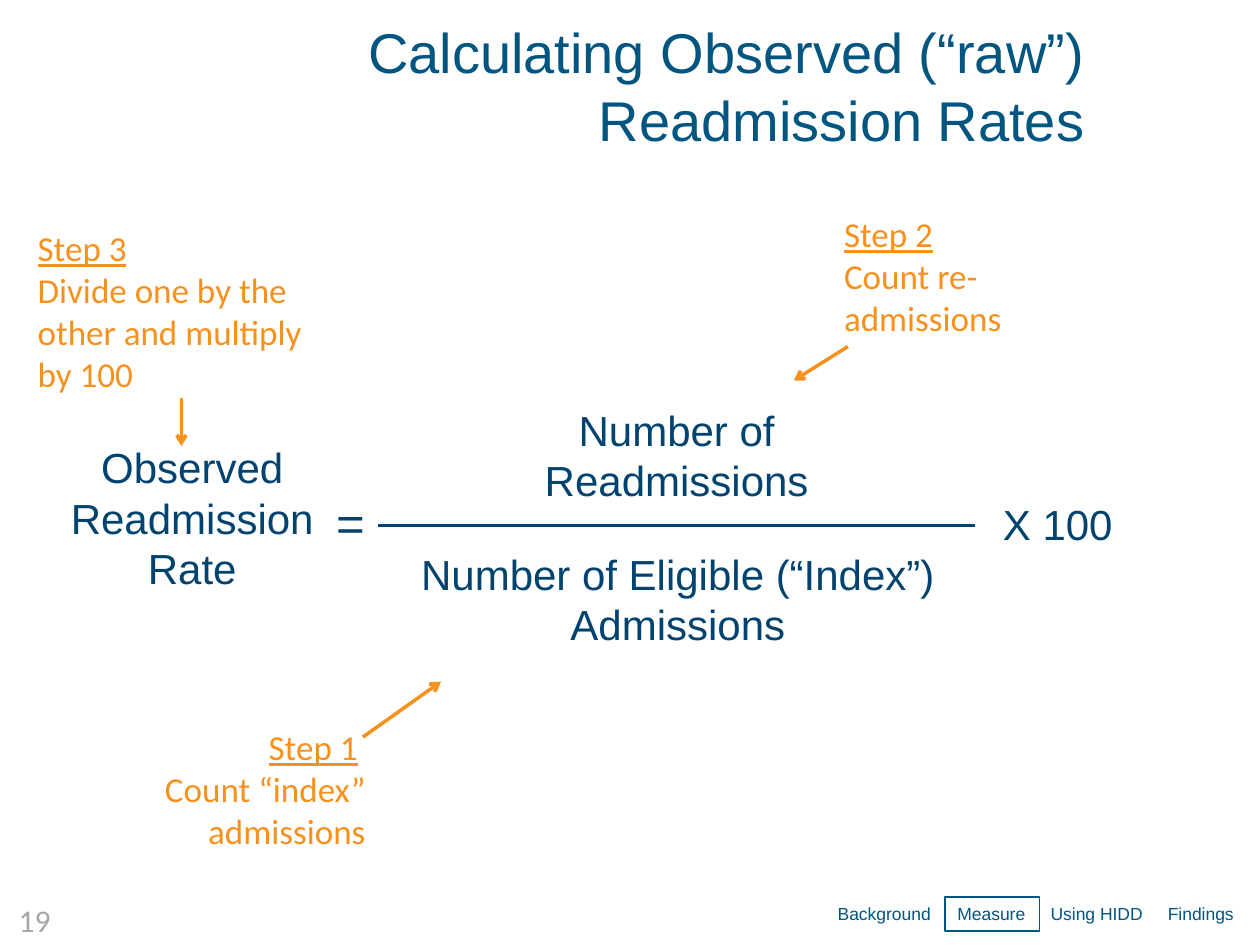
from dataclasses import dataclass

from lxml import etree
from pptx import Presentation
from pptx import util as u
from pptx.dml.color import RGBColor
from pptx.enum import shapes, text
from pptx.oxml import ns

TEAL = RGBColor(0x00, 0x55, 0x81)
NAVY = RGBColor(0x00, 0x43, 0x6E)
ORANGE = RGBColor(0xF6, 0x91, 0x1E)
GREY = RGBColor(0xA6, 0xA6, 0xA6)

LEFT, CENTER, RIGHT = text.PP_ALIGN.LEFT, text.PP_ALIGN.CENTER, text.PP_ALIGN.RIGHT
TOP, MIDDLE = text.MSO_ANCHOR.TOP, text.MSO_ANCHOR.MIDDLE


@dataclass
class Area:
    left: float
    top: float
    width: float
    height: float

    def lengths(self) -> list:
        return [u.Inches(v) for v in (self.left, self.top, self.width, self.height)]


@dataclass
class Term:
    """One part of the formula."""
    lines: list
    area: Area
    size: int = 24
    align: text.PP_ALIGN = CENTER
    anchor: text.MSO_ANCHOR = TOP
    wrap: bool = True


@dataclass
class Step:
    """A numbered note with an arrow to the part it explains."""
    heading: str
    lines: list
    area: Area
    start: tuple
    end: tuple
    align: text.PP_ALIGN = LEFT
    wrap: bool = True


@dataclass
class Section:
    label: str
    left: float
    width: float
    current: bool = False


TERMS = [
    Term(["Number of", "Readmissions"], Area(2.87, 3.16, 5, 0.91)),
    Term(["Number of Eligible (“Index”)", "Admissions"], Area(2.88, 4.3, 5, 0.91)),
    Term(["Observed Readmission", "Rate"], Area(0.25, 3.45, 2.55, 1.31), anchor=MIDDLE),
    Term(["="], Area(2.57, 3.86, 0.43, 0.57), size=28, align=LEFT, anchor=MIDDLE, wrap=False),
    Term(["X 100"], Area(7.12, 3.91, 2.55, 0.5), anchor=MIDDLE),
]
STEPS = [
    Step("Step 1 ", ["Count “index”", "admissions"], Area(1.19, 5.71, 1.81, 1.11),
         (2.88, 5.85), (3.5, 5.41), align=RIGHT, wrap=False),
    Step("Step 2", ["Count re-admissions"], Area(6.6, 1.64, 2.12, 1.11),
         (6.73, 2.75), (6.3, 3.02)),
    Step("Step 3", ["Divide one by the other and multiply by 100"],
         Area(0.2, 1.75, 2.48, 1.45), (1.44, 3.16), (1.44, 3.54)),
]
SECTIONS = [
    Section("Background", 6.55, 0.95),
    Section("Measure", 7.5, 0.75, current=True),
    Section("Using HIDD", 8.24, 0.94),
    Section("Findings", 9.17, 0.73),
]


def write(box, lines: list, *, size: int, color: RGBColor, font: str = "Arial",
          align=LEFT, anchor=TOP, wrap: bool = True, heading: str = "") -> None:
    """Fill a box with one paragraph per line, under an underlined heading if given."""
    frame = box.text_frame
    frame.word_wrap = wrap
    frame.auto_size = text.MSO_AUTO_SIZE.NONE
    frame.vertical_anchor = anchor
    for index, line in enumerate([heading, *lines] if heading else lines):
        para = frame.paragraphs[0] if index == 0 else frame.add_paragraph()
        para.alignment = align
        # A trailing space of a heading stays free of the underline
        label = line.rstrip()
        for part in filter(None, (label, line[len(label):])):
            span = para.add_run()
            span.text = part
            span.font.name = font
            span.font.size = u.Pt(size)
            span.font.color.rgb = color
            if heading and index == 0 and part == label:
                span.font.underline = True


def add_line(page, start: tuple, end: tuple, color: RGBColor, arrow: bool = False) -> None:
    line = page.shapes.add_connector(
        shapes.MSO_CONNECTOR.STRAIGHT, *(u.Inches(v) for v in (*start, *end)))
    line.line.color.rgb = color
    line.line.width = u.Pt(2)
    if arrow:
        etree.SubElement(line.line._get_or_add_ln(), ns.qn("a:tailEnd"), type="arrow")
    etree.SubElement(line._element.spPr, ns.qn("a:effectLst"))


def add_section(page, section: Section) -> None:
    area = Area(section.left, 7.12, section.width, 0.27).lengths()
    if section.current:
        box = page.shapes.add_shape(shapes.MSO_SHAPE.RECTANGLE, *area)
        box.shadow.inherit = False
        box.fill.background()
        box.line.color.rgb = TEAL
        box.line.width = u.Pt(0.75)
    else:
        box = page.shapes.add_textbox(*area)
    write(box, [section.label], size=10, color=TEAL, wrap=False)


def main() -> None:
    deck = Presentation()
    deck.slide_width, deck.slide_height = u.Inches(10), u.Inches(7.5)
    page = deck.slides.add_slide(deck.slide_layouts[0])
    subtitle = page.placeholders[1]._element
    subtitle.getparent().remove(subtitle)

    # Title and page number
    title = page.shapes.title
    title.left, title.top, title.width, title.height = Area(0.21, 0.21, 8.5, 0.93).lengths()
    write(title, ["Calculating Observed (“raw”) Readmission Rates"],
          size=32, color=TEAL, align=RIGHT, anchor=MIDDLE)
    number = page.shapes.add_textbox(*Area(0, 7.1, 0.5, 0.4).lengths())
    write(number, ["19"], size=18, color=GREY, font="Calibri", align=RIGHT, wrap=False)

    # Formula with its fraction bar
    for term in TERMS:
        box = page.shapes.add_textbox(*term.area.lengths())
        write(box, term.lines, size=term.size, color=NAVY, align=term.align,
              anchor=term.anchor, wrap=term.wrap)
    add_line(page, (3, 4.17), (7.74, 4.17), NAVY)

    # Steps
    for step in STEPS:
        box = page.shapes.add_textbox(*step.area.lengths())
        write(box, step.lines, heading=step.heading, size=20, color=ORANGE,
              font="Calibri", align=step.align, wrap=step.wrap)
        add_line(page, step.start, step.end, ORANGE, arrow=True)

    # Section tracker
    for section in SECTIONS:
        add_section(page, section)

    deck.save("out.pptx")


if __name__ == "__main__":
    main()
